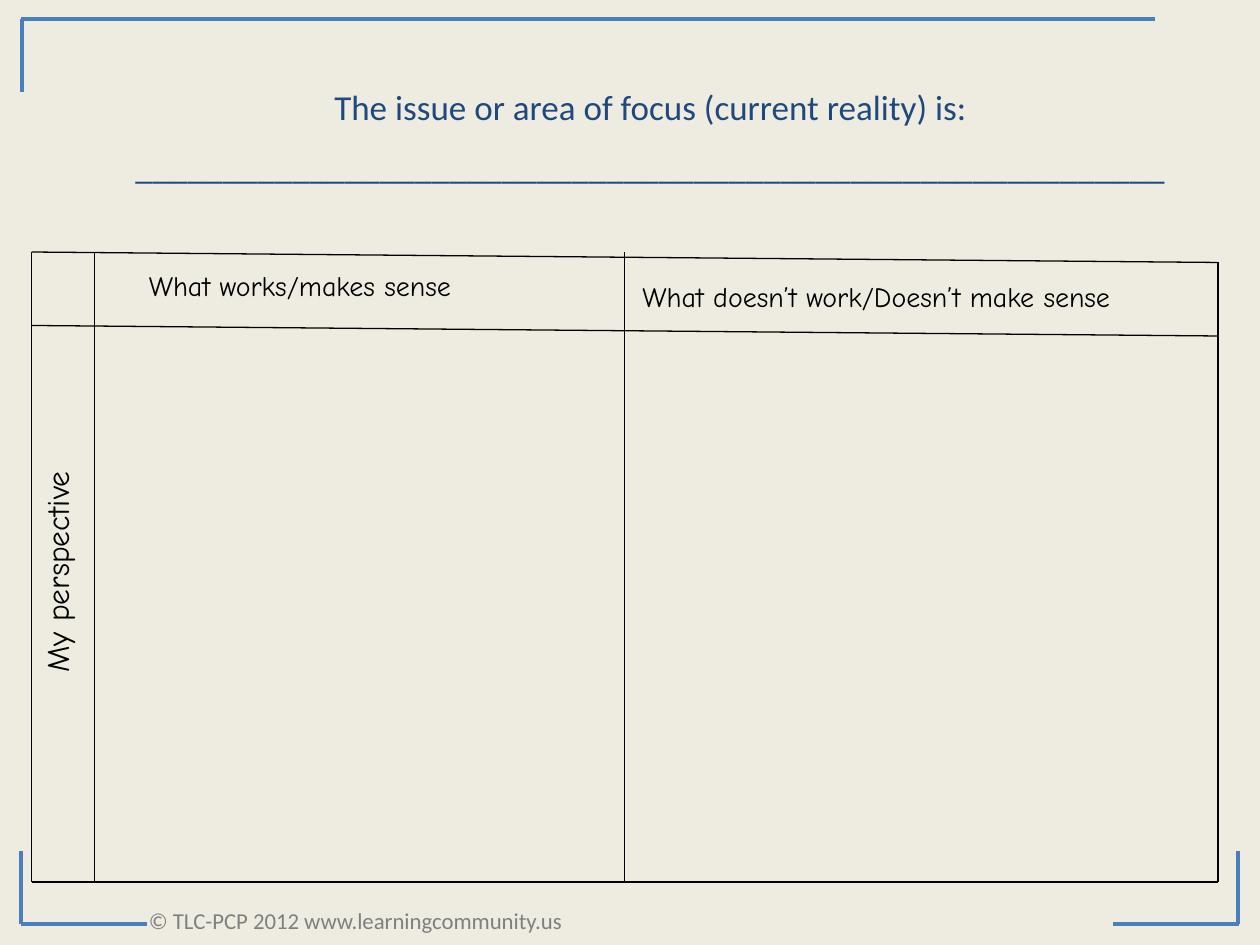
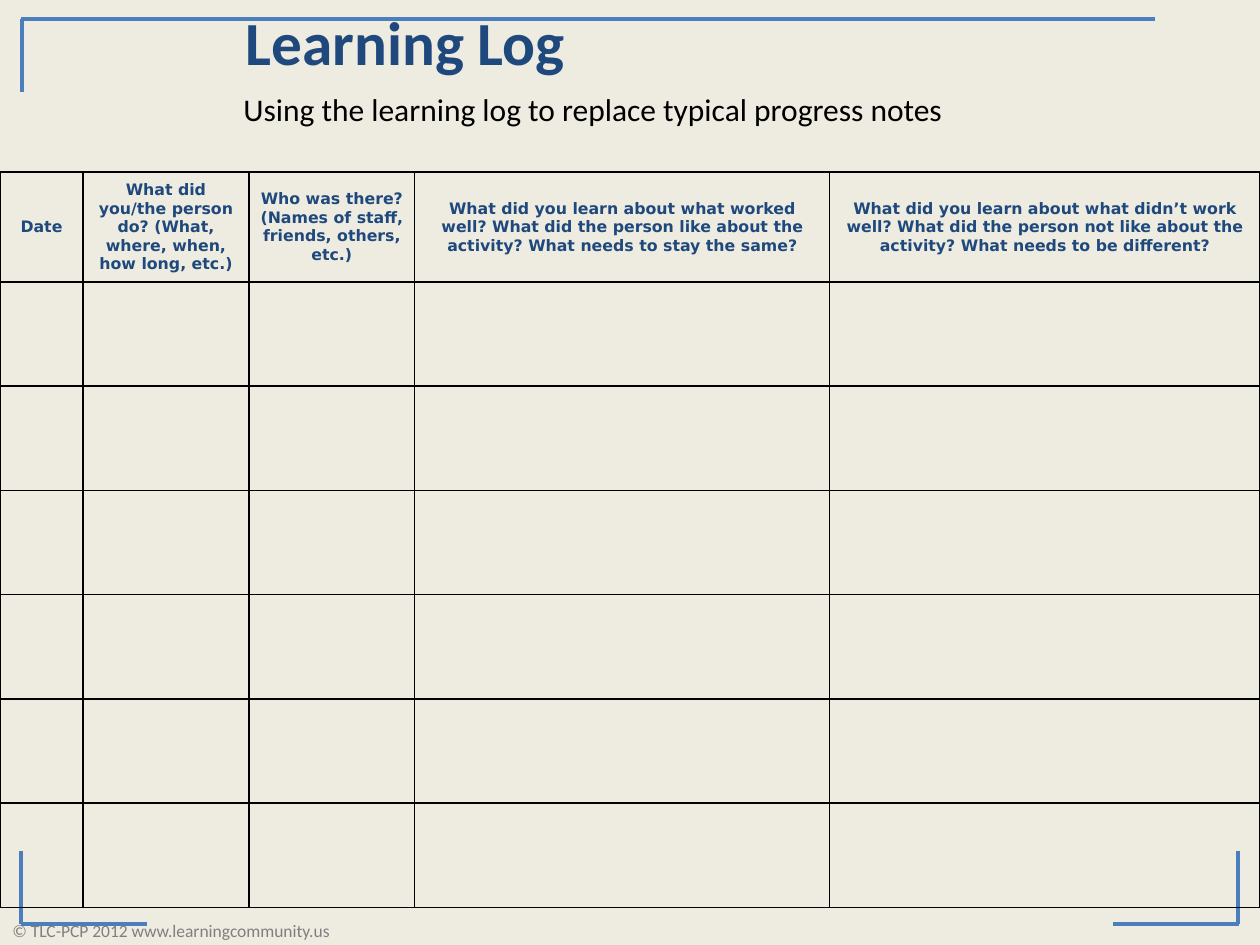
from lxml import etree
from pptx import Presentation
from pptx import util as u
from pptx.dml.color import RGBColor
from pptx.enum import shapes, text
from pptx.oxml import ns

COLORS = {"paper": "EEECE1", "frame": "4B7EBC", "title": "1F497D",
          "footer": "7F7F7F", "ink": "000000"}
BODY, HAND, TABLE = "Calibri", "Comic Neue", "DejaVu Sans"
FOOTER = "© TLC-PCP 2012 www.learningcommunity.us"

prs = Presentation()
prs.slide_width, prs.slide_height = u.Inches(10), u.Inches(7.5)
unit = prs.slide_width / 120


def add_line(s, x1, y1, x2, y2, color, width):
    ln = s.shapes.add_connector(shapes.MSO_CONNECTOR.STRAIGHT,
                                *(round(v * unit) for v in (x1, y1, x2, y2)))
    ln.line.color.rgb = RGBColor.from_string(COLORS[color])
    ln.line.width = u.Pt(width)
    etree.SubElement(ln.element.spPr, ns.qn("a:effectLst"))


def set_text(sp, box, words, size, color, font=BODY, bold=False,
             align=text.PP_ALIGN.LEFT, anchor=text.MSO_ANCHOR.TOP):
    sp.left, sp.top, sp.width, sp.height = (round(v * unit) for v in box)
    tf = sp.text_frame
    tf.text = words
    tf.word_wrap = True
    tf.auto_size = text.MSO_AUTO_SIZE.NONE
    tf.vertical_anchor = anchor
    for p in tf.paragraphs:
        p.alignment = align
        for r in p.runs:
            r.font.size, r.font.name, r.font.bold = u.Pt(size), font, bold
            r.font.color.rgb = RGBColor.from_string(COLORS[color])
    return tf


fill = prs.slide_master.background.fill
fill.solid()
fill.fore_color.rgb = RGBColor.from_string(COLORS["paper"])

frame = [(2, 1.8, 110, 1.8), (2.1, 1.8, 2.1, 8.75),
         (2, 81, 2, 88), (2, 88, 14, 88),
         (117.9, 81, 117.9, 88), (106, 88, 118, 88)]
footers = [((13, 85.3, 107, 4.7), 13), ((0, 87.25, 120, 2.75), 10)]
slides = []
for box, size in footers:
    s = prs.slides.add_slide(prs.slide_layouts[5])
    for ends in frame:
        add_line(s, *ends, "frame", 2.5)
    set_text(s.shapes.add_textbox(0, 0, 0, 0), box, FOOTER, size, "footer",
             anchor=text.MSO_ANCHOR.MIDDLE)
    slides.append(s)
focus, log = slides

tf = set_text(focus.shapes.title, (7, 7.5, 108, 11.2),
              "The issue or area of focus (current reality) is:\n" + "_" * 59,
              20, "title", align=text.PP_ALIGN.CENTER)
tf.margin_left, tf.margin_right = u.Inches(0.25), u.Inches(0.09)
tf.paragraphs[1].space_before = u.Pt(10)

left, right, top, bottom = 3, 116, 24, 84
for x, y in ((left, top), (9, top), (59.5, top), (right, top + 1)):
    add_line(focus, x, y, x, bottom, "ink", 0.75)
for y, drop in ((top, 1), (top + 7, 1), (bottom, 0)):
    add_line(focus, left, y, right, y + drop, "ink", 0.75)

for box, words in (((13, 25, 43, 4.4), "What works/makes sense"),
                   ((60, 26, 57, 4.4), "What doesn’t work/Doesn’t make sense")):
    set_text(focus.shapes.add_textbox(0, 0, 0, 0), box, words, 16, "ink", HAND)
sp = focus.shapes.add_textbox(0, 0, 0, 0)
set_text(sp, (left, 28, 6, 53), "My perspective", 18, "ink", HAND,
         align=text.PP_ALIGN.CENTER)
sp.element.txBody.bodyPr.set("vert", "vert270")

headers = [
    "Date",
    "What did you/the person do? (What, where, when, how long, etc.)",
    "Who was there? (Names of staff, friends, others, etc.)",
    "What did you learn about what worked well? What did the person like "
    "about the activity? What needs to stay the same?",
    "What did you learn about what didn’t work well? What did the person not "
    "like about the activity? What needs to be different?"]
widths = [7.9, 15.8, 15.8, 39.5, 41]
heights = [10.46] + [9.93] * 6
table = log.shapes.add_table(
    len(heights), len(widths), 0, round(16.4 * unit),
    prs.slide_width, round(sum(heights) * unit)).table
table.first_row = table.horz_banding = False
for col, width in zip(table.columns, widths):
    col.width = round(width * unit)
for row, height in zip(table.rows, heights):
    row.height = round(height * unit)
for cell in table.iter_cells():
    tcPr = cell._tc.get_or_add_tcPr()
    for side in ("a:lnL", "a:lnR", "a:lnT", "a:lnB"):
        ln = etree.SubElement(tcPr, ns.qn(side), w=str(u.Pt(1)))
        solid = etree.SubElement(ln, ns.qn("a:solidFill"))
        etree.SubElement(solid, ns.qn("a:srgbClr"), val=COLORS["ink"])
    cell.fill.background()
    cell.margin_left = cell.margin_right = u.Inches(0.09)
    cell.vertical_anchor = text.MSO_ANCHOR.MIDDLE
for i, words in enumerate(headers):
    cell = table.cell(0, i)
    cell.text = words
    p = cell.text_frame.paragraphs[0]
    p.alignment = text.PP_ALIGN.CENTER
    r = p.runs[0]
    r.font.size, r.font.name, r.font.bold = u.Pt(9), TABLE, True
    r.font.color.rgb = RGBColor.from_string(COLORS["title"])

set_text(log.shapes.title, (22.2, 0, 97.8, 8), "Learning Log", 35, "title",
         bold=True, anchor=text.MSO_ANCHOR.BOTTOM)
set_text(log.shapes.add_textbox(0, 0, 0, 0), (22, 8, 70, 4.7),
         "Using the learning log to replace typical progress notes", 18, "ink")

prs.save("out.pptx")
